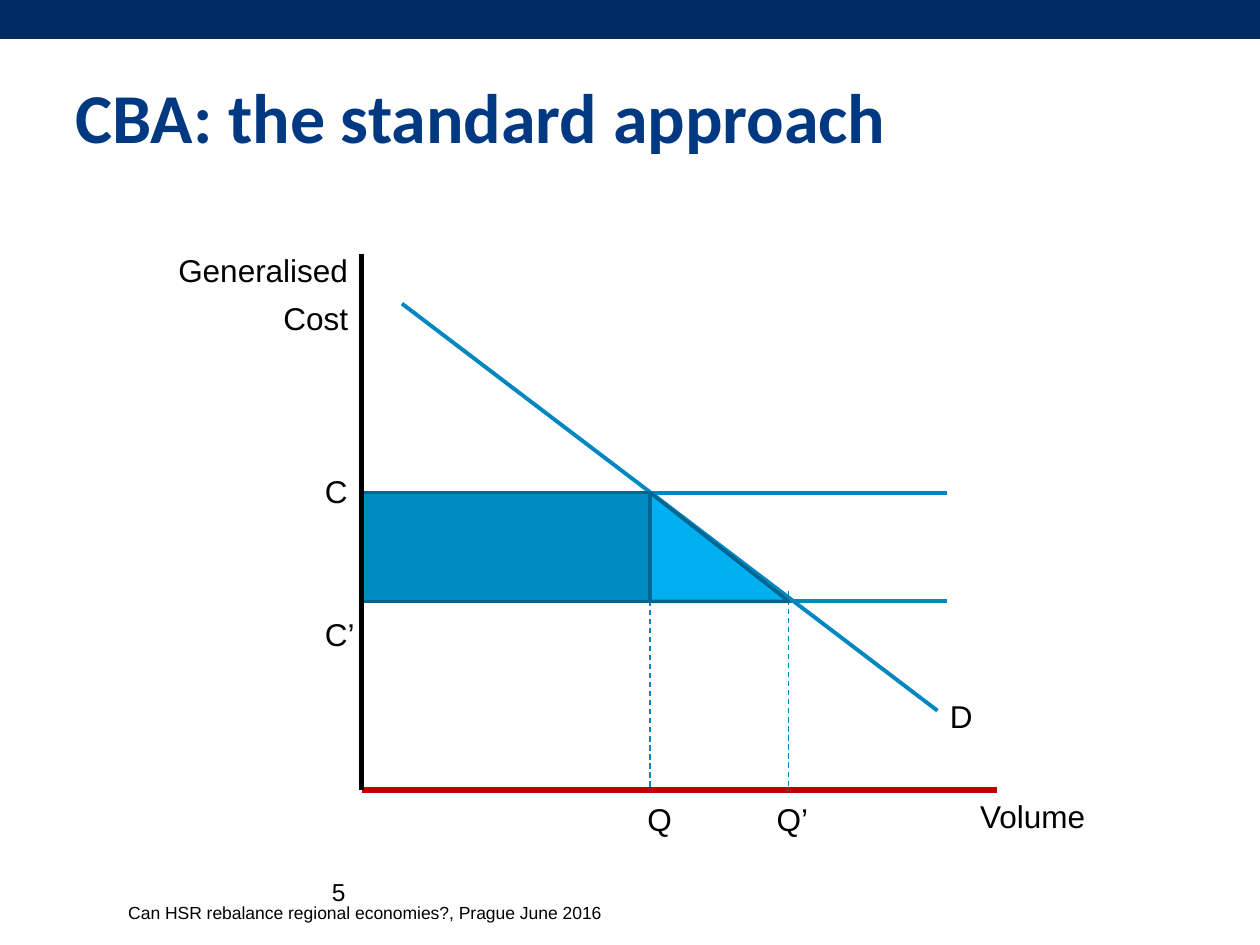
from pptx import Presentation
from pptx.dml.color import RGBColor
from pptx.enum.dml import MSO_LINE
from pptx.enum.shapes import MSO_CONNECTOR, MSO_SHAPE
from pptx.enum.text import MSO_ANCHOR, PP_ALIGN
from pptx.oxml.ns import qn
from pptx.util import Pt
from lxml import etree

LEFT, RIGHT = PP_ALIGN.LEFT, PP_ALIGN.RIGHT
TOP, MID = MSO_ANCHOR.TOP, MSO_ANCHOR.MIDDLE
RECT, TRI = MSO_SHAPE.RECTANGLE, MSO_SHAPE.RIGHT_TRIANGLE
DASH = MSO_LINE.DASH
BLUE, EDGE, BLACK, NAVY = "0087C0", "006691", "000000", "003882"

# Key levels of the diagram: axes, costs and volumes
X0, Y0 = 206.6, 451.4
C1, C2 = 281.5, 343.6
Q1, Q2 = 371.5, 450.7
END = 541.4

# Lines: from, to, colour, width, dash
LINES = [
    ((X0, Y0), (569.5, Y0), "C00000", 3, None),
    ((229.7, 173.5), (535.7, 406.1), BLUE, 2.25, None),
    ((X0, C1), (END, C1), BLUE, 2.25, None),
    ((X0, C2), (END, C2), BLUE, 2.25, None),
    ((Q1, C1), (Q1, Y0), BLUE, 0.75, DASH),
    ((Q2, 337.7), (Q2, Y0), BLUE, 0.75, DASH),
]
AXIS = ((X0, 145.4), (X0, Y0), BLACK, 3, None)

# Benefit areas: shape, left, right, fill
AREAS = [(RECT, X0, Q1, "008AC4"), (TRI, Q1, Q2, "00B0F0")]

# Texts: lines, box, size, align, anchor, colour, font, bold
LABEL = (18, LEFT, TOP, BLACK, "Arial", False)
TEXTS = [
    (["CBA: the standard approach"], (36, 43.2, 653, 45.4),
     40, LEFT, MID, NAVY, "Calibri", True),
    (["5"], (36.7, 491, 167.8, 37.4), 14, RIGHT, MID, BLACK, "Arial", False),
    (["Generalised", "Cost"], (80, 139.7, 126, 54),
     18, RIGHT, TOP, BLACK, "Arial", False),
    (["C"], (178.6, 266.4, 34, 28.8), *LABEL),
    (["C’"], (178.6, 348, 34, 28.8), *LABEL),
    (["Q"], (362.9, 453.6, 36, 28.8), *LABEL),
    (["Q’"], (436.8, 453.6, 36, 28.8), *LABEL),
    (["Volume"], (553, 451.8, 86, 28.8), *LABEL),
    (["D"], (535.7, 394.9, 30, 28.8), *LABEL),
    (["Can HSR rebalance regional economies?, Prague June 2016"],
     (66.2, 511.9, 476.6, 21.6), 10, LEFT, TOP, BLACK, "Arial", False),
]


def rgb(code):
    return RGBColor.from_string(code)


def pts(vals):
    return [Pt(v) for v in vals]


def add_area(kind, box, fill, edge=None):
    area = slide.shapes.add_shape(kind, *pts(box))
    area.shadow.inherit = False
    area.fill.solid()
    area.fill.fore_color.rgb = rgb(fill)
    if edge:
        area.line.color.rgb = rgb(edge)
        area.line.width = Pt(2)
    else:
        area.line.fill.background()


def add_line(start, end, color, width, dash):
    line = slide.shapes.add_connector(
        MSO_CONNECTOR.STRAIGHT, *pts(start + end))
    line.line.color.rgb = rgb(color)
    line.line.width = Pt(width)
    if dash:
        line.line.dash_style = dash
    etree.SubElement(line._element.spPr, qn("a:effectLst"))


def add_text(rows, box, size, align, anchor, color, face, bold):
    frame = slide.shapes.add_textbox(*pts(box)).text_frame
    frame.word_wrap = True
    frame.vertical_anchor = anchor
    frame.text = "\n".join(rows)
    for i, para in enumerate(frame.paragraphs):
        para.alignment = align
        if i:
            para.space_before = Pt(6)
        font = para.runs[0].font
        font.size, font.name, font.bold = Pt(size), face, bold
        font.color.rgb = rgb(color)


deck = Presentation()
deck.slide_width, deck.slide_height = Pt(720), Pt(540)
slide = deck.slides.add_slide(deck.slide_layouts[6])

# Top band
add_area(RECT, (0, 0, 720, 22.3), "002A62")

# Diagram, with the cost axis over the areas
for item in LINES:
    add_line(*item)
for kind, x1, x2, fill in AREAS:
    add_area(kind, (x1, C1, x2 - x1, C2 - C1), fill, EDGE)
add_line(*AXIS)

# Title, labels and footer
for item in TEXTS:
    add_text(*item)

deck.save("out.pptx")
